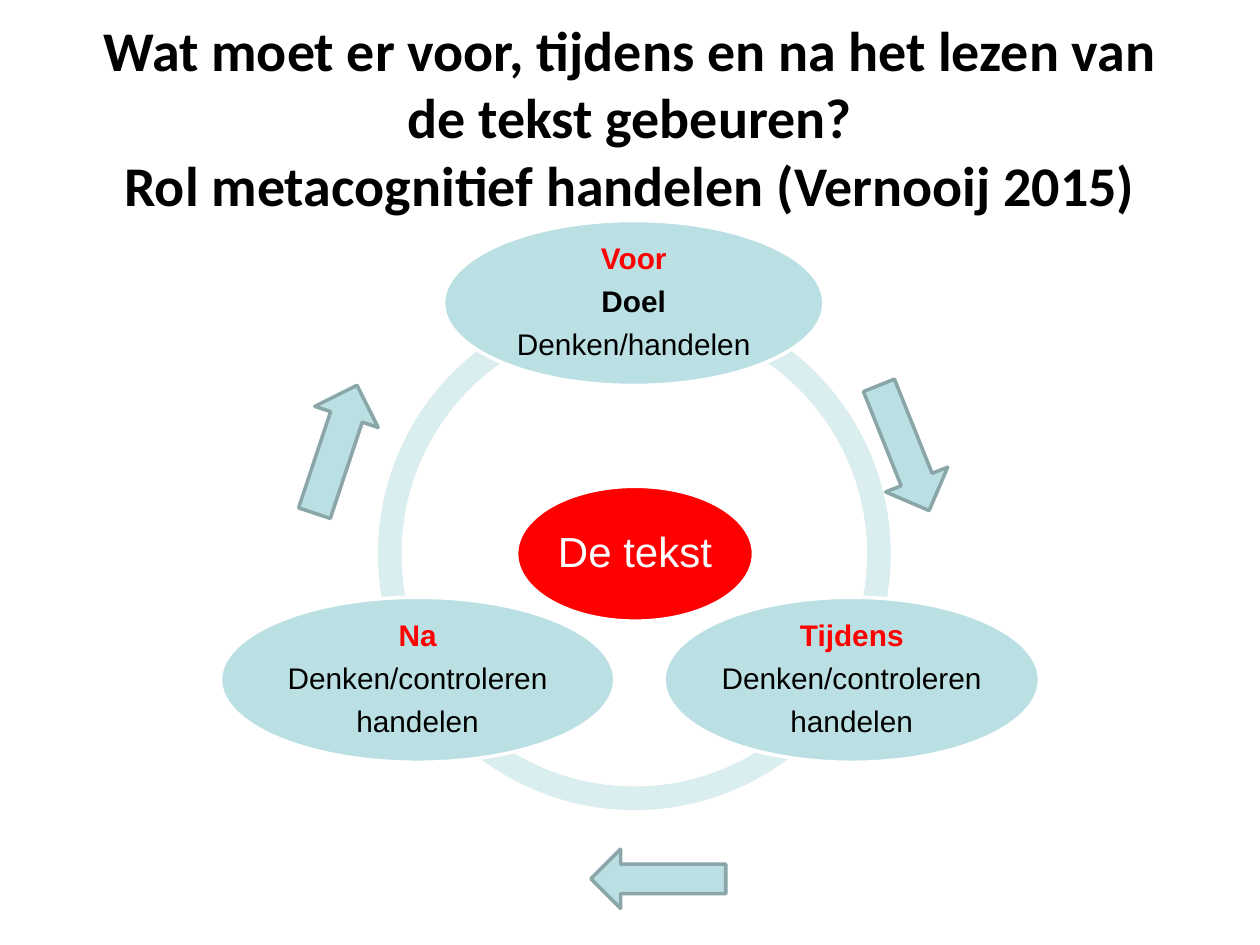
from pptx import Presentation
from pptx.dml.color import RGBColor
from pptx.enum.shapes import MSO_SHAPE as Shape
from pptx.enum.text import MSO_ANCHOR as Anchor, MSO_AUTO_SIZE as AutoSize, PP_ALIGN as Align
from pptx.util import Inches, Pt

BLACK = RGBColor(0x00, 0x00, 0x00)
WHITE = RGBColor(0xFF, 0xFF, 0xFF)
RED = RGBColor(0xFF, 0x00, 0x00)
TEAL = RGBColor(0xBB, 0xE0, 0xE3)
PALE_TEAL = RGBColor(0xDA, 0xED, 0xEF)
GREY_TEAL = RGBColor(0x8A, 0xA6, 0xA8)


class CycleSlide:
    title_font = "Calibri"
    body_font = "Arial"

    def __init__(self, prs):
        self.slide = prs.slides.add_slide(prs.slide_layouts[5])

    def title(self, text, box):
        title = self.slide.shapes.title
        title.left, title.top, title.width, title.height = map(Inches, box)
        frame = title.text_frame
        frame.text = text
        frame.word_wrap = True
        frame.auto_size = AutoSize.NONE
        frame.vertical_anchor = Anchor.MIDDLE
        paragraph = frame.paragraphs[0]
        paragraph.alignment = Align.CENTER
        for run in paragraph.runs:
            self.style(run.font, self.title_font, 32, BLACK, True)

    def style(self, font, name, size, color, bold):
        font.name, font.size, font.bold = name, Pt(size), bold
        font.color.rgb = color

    def shape(self, kind, box, fill, line=None, rotation=0):
        shape = self.slide.shapes.add_shape(kind, *map(Inches, box))
        shape.shadow.inherit = False
        shape.rotation = rotation
        shape.fill.solid()
        shape.fill.fore_color.rgb = fill
        if line is None:
            shape.line.fill.background()
        else:
            shape.line.color.rgb = line
            shape.line.width = Pt(2)
        return shape

    def arc(self, box, start, end):
        arc = self.shape(Shape.BLOCK_ARC, box, PALE_TEAL)
        # Angles are stored in 60000ths of a degree, adjustments in 100000ths
        for i, value in enumerate((start * 0.6, end * 0.6, 0.046)):
            arc.adjustments[i] = value

    def ellipse(self, box, fill, lines, size, inset):
        """Draw an ellipse; lines holds (text, color, bold) per paragraph."""
        frame = self.shape(Shape.OVAL, box, fill, WHITE).text_frame
        frame.word_wrap = True
        frame.vertical_anchor = Anchor.MIDDLE
        frame.margin_left = frame.margin_right = Inches(inset)
        frame.margin_top = frame.margin_bottom = Inches(inset)
        frame.text = "\n".join(text for text, _, _ in lines)
        for paragraph, (_, color, bold) in zip(frame.paragraphs, lines):
            paragraph.alignment = Align.CENTER
            paragraph.line_spacing = 0.9
            paragraph.space_after = Pt(round(size * 0.35))
            self.style(paragraph.runs[0].font, self.body_font, size, color, bold)

    def arrow(self, kind, box, rotation):
        self.shape(kind, box, TEAL, GREY_TEAL, rotation)


def main():
    prs = Presentation()
    prs.slide_width, prs.slide_height = Inches(10), Inches(7.5)
    cycle = CycleSlide(prs)

    cycle.title("Wat moet er voor, tijdens en na het lezen van de tekst gebeuren?\v"
                "Rol metacognitief handelen (Vernooij 2015)", (0.5, 0.3, 9, 1.25))

    # Ring behind the phases
    for start, end in ((90, 162), (18, 90), (162, 18)):
        cycle.arc((3, 2.36, 4.07, 4.07), start, end)

    # Centre
    cycle.ellipse((4.1, 3.86, 1.88, 1.07), RED, [("De tekst", WHITE, False)], 24, 0.03)

    # Phases: left, top, width, heading and remaining lines
    check = [("Denken/controleren", BLACK, False), ("handelen", BLACK, False)]
    goal = [("Doel", BLACK, True), ("Denken/handelen", BLACK, False)]
    phases = (
        (3.52, 1.75, 3.02, "Voor", goal),
        (5.27, 4.74, 2.98, "Tijdens", check),
        (1.75, 4.74, 3.13, "Na", check),
    )
    for left, top, width, heading, steps in phases:
        cycle.ellipse((left, top, width, 1.31), TEAL,
                      [(heading, RED, True)] + steps, 17, 0.02)

    # Direction arrows
    cycle.arrow(Shape.DOWN_ARROW, (6.91, 3.02, 0.53, 1.07), 338.2)
    cycle.arrow(Shape.RIGHT_ARROW, (4.69, 6.74, 1.07, 0.47), 180)
    cycle.arrow(Shape.RIGHT_ARROW, (2.13, 3.3, 1.07, 0.53), 288.4)

    prs.save("out.pptx")


if __name__ == "__main__":
    main()
